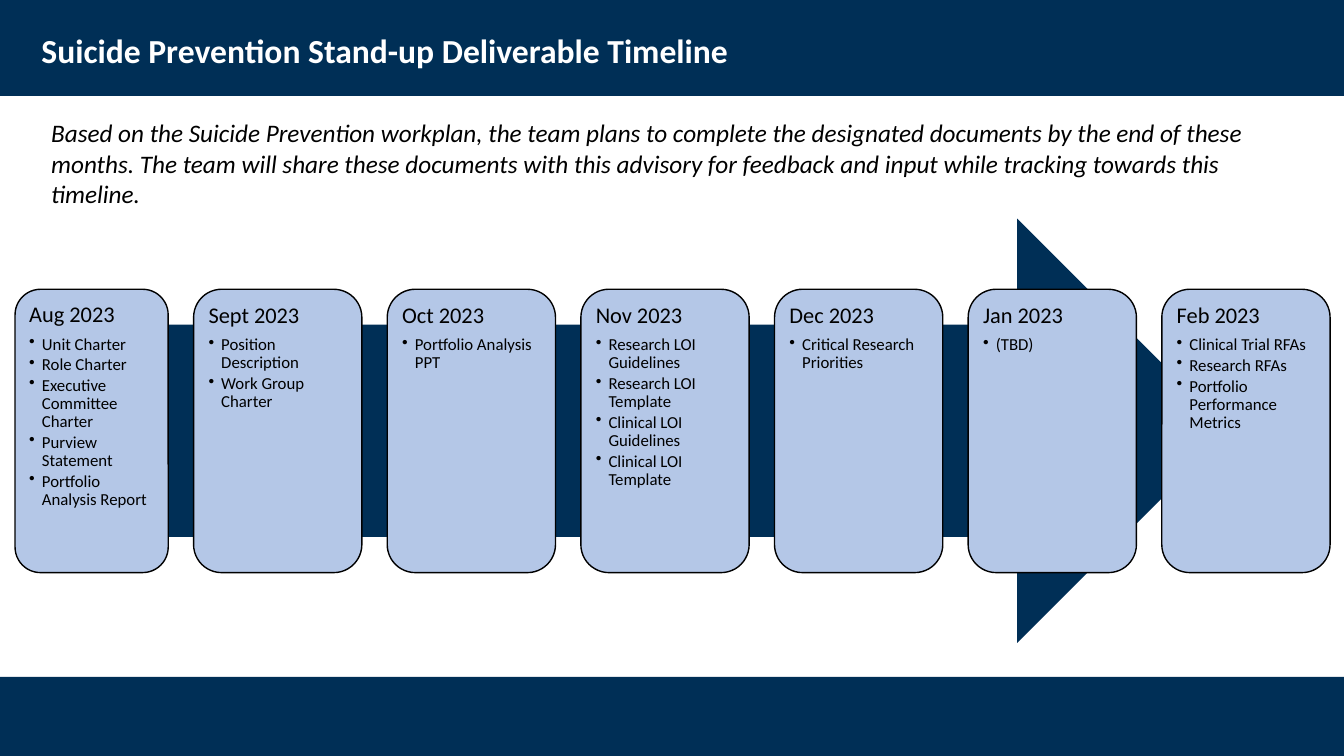
from pptx import Presentation
from pptx.dml.color import RGBColor
from pptx.enum.shapes import MSO_SHAPE
from pptx.enum.text import MSO_ANCHOR, MSO_AUTO_SIZE, PP_ALIGN
from pptx.oxml import parse_xml
from pptx.oxml.ns import nsdecls
from pptx.util import Cm, Pt

RECT = MSO_SHAPE.RECTANGLE
ROUND = MSO_SHAPE.ROUNDED_RECTANGLE
ARROW = MSO_SHAPE.RIGHT_ARROW
TOP, MIDDLE = MSO_ANCHOR.TOP, MSO_ANCHOR.MIDDLE
LEFT = PP_ALIGN.LEFT
NO_FIT = MSO_AUTO_SIZE.NONE

NAVY = RGBColor(0x00, 0x2F, 0x56)
PALE = RGBColor(0xB4, 0xC7, 0xE7)
BLACK = RGBColor(0x00, 0x00, 0x00)
WHITE = RGBColor(0xFF, 0xFF, 0xFF)
FONT = "Calibri"

WIDTH, HEIGHT = 33.87, 19.05
PITCH = 4.88  # from one card's left edge to the next
MONTHS = [
    ("Aug 2023", ["Unit Charter", "Role Charter", "Executive Committee Charter",
                  "Purview Statement", "Portfolio Analysis Report"]),
    ("Sept 2023", ["Position Description", "Work Group Charter"]),
    ("Oct 2023", ["Portfolio Analysis PPT"]),
    ("Nov 2023", ["Research LOI Guidelines", "Research LOI Template",
                  "Clinical LOI Guidelines", "Clinical LOI Template"]),
    ("Dec 2023", ["Critical Research Priorities"]),
    ("Jan 2023", ["(TBD)"]),
    ("Feb 2023", ["Clinical Trial RFAs", "Research RFAs",
                  "Portfolio Performance Metrics"]),
]
INTRO = (
    "Based on the Suicide Prevention workplan, the team plans to complete the "
    "designated documents by the end of these months. The team will share these "
    "documents with this advisory for feedback and input while tracking towards "
    "this timeline."
)


def add_run(para, text, size, color=BLACK, bold=False, italic=False):
    run = para.add_run()
    run.text = text
    font = run.font
    font.name, font.size = FONT, Pt(size)
    font.bold, font.italic = bold, italic
    font.color.rgb = color


def add_form(slide, kind, left, top, width, height, fill):
    form = slide.shapes.add_shape(kind, Cm(left), Cm(top), Cm(width), Cm(height))
    form.shadow.inherit = False
    form.fill.solid()
    form.fill.fore_color.rgb = fill
    form.line.fill.background()
    return form


def add_bar(slide, top, height):
    bar = add_form(slide, RECT, 0, top, WIDTH, height, NAVY)
    # Send the bar behind the title
    slide.shapes.title._element.addprevious(bar._element)


def set_title(slide, text):
    title = slide.shapes.title
    title.left, title.top = Cm(0.79), Cm(0.46)
    title.width, title.height = Cm(29.21), Cm(1.73)
    frame = title.text_frame
    frame.vertical_anchor = MIDDLE
    frame.auto_size = NO_FIT
    para = frame.paragraphs[0]
    para.alignment = LEFT
    para.line_spacing = 0.9
    add_run(para, text, 24, WHITE, bold=True)


def add_intro(slide):
    box = slide.shapes.add_textbox(Cm(1.04), Cm(2.84), Cm(32.26), Cm(2.57))
    box.text_frame.word_wrap = True
    add_run(box.text_frame.paragraphs[0], INTRO, 18, italic=True)


def set_bullet(para):
    props = para._p.get_or_add_pPr()
    props.set("marL", str(Cm(0.32)))
    props.set("indent", str(-Cm(0.32)))
    props.append(parse_xml(f'<a:buChar {nsdecls("a")} char="•"/>'))


def add_card(slide, left, width, month, items):
    card = add_form(slide, ROUND, left, 7.29, width, 7.14, PALE)
    card.line.color.rgb = BLACK
    card.line.width = Pt(1)
    frame = card.text_frame
    frame.word_wrap = True
    frame.vertical_anchor = TOP
    frame.margin_left = frame.margin_right = Cm(0.17)
    frame.margin_top = frame.margin_bottom = Cm(0.17)
    head = frame.paragraphs[0]
    head.space_after = Pt(5.6)
    add_run(head, month, 16)
    for item in items:
        para = frame.add_paragraph()
        set_bullet(para)
        para.space_after = Pt(1.8)
        add_run(para, item, 12)
    for para in frame.paragraphs:
        para.alignment = LEFT
        para.line_spacing = 0.9


def main():
    deck = Presentation()
    deck.slide_width, deck.slide_height = Cm(WIDTH), Cm(HEIGHT)
    slide = deck.slides.add_slide(deck.slide_layouts[5])

    # Bars and title
    add_bar(slide, 0, 2.42)
    add_bar(slide, 17.06, HEIGHT - 17.06)
    set_title(slide, "Suicide Prevention Stand-up Deliverable Timeline")

    # Timeline: arrow behind one card a month, the first one narrower
    add_form(slide, ARROW, 2.84, 5.51, 28.14, 10.69, NAVY)
    for index, (month, items) in enumerate(MONTHS):
        left, width = (index * PITCH, 4.24) if index else (0.38, 3.86)
        add_card(slide, left, width, month, items)

    # Introduction
    add_intro(slide)
    deck.save("out.pptx")


if __name__ == "__main__":
    main()
